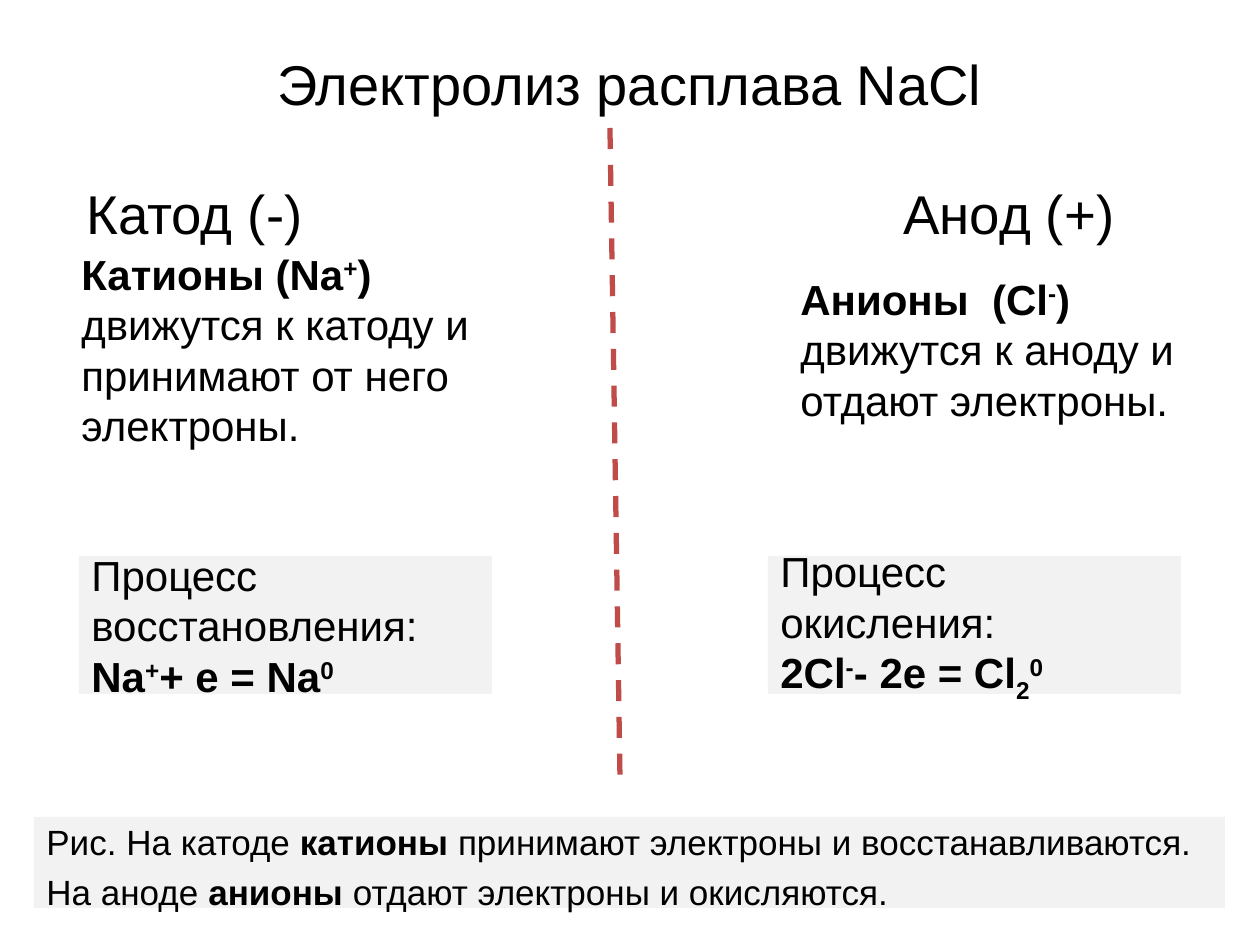
from dataclasses import dataclass

from lxml import etree
from pptx import Presentation
from pptx import util as u
from pptx.dml.color import RGBColor
from pptx.enum import dml, shapes, text
from pptx.oxml.ns import qn

PX = u.Inches(1) / 126


@dataclass(frozen=True)
class Theme:
    font: str = "Arial"
    ink: str = "000000"
    panel: str = "F2F2F2"
    divider: str = "BF4C48"
    title: float = 32
    heading: float = 31.2
    body: float = 24
    caption: float = 20
    divider_width: float = 3


THEME = Theme()
BOLD = {"bold": True}
SUP = {"bold": True, "baseline": 30}
SUB = {"bold": True, "baseline": -25}


def px(*lengths):
    return [u.Emu(round(length * PX)) for length in lengths]


def write(paragraph, wording, *, size, bold=False, baseline=0):
    run = paragraph.add_run()
    run.text = wording
    run.font.name = THEME.font
    run.font.size = u.Pt(size)
    run.font.bold = bold
    run.font.color.rgb = RGBColor.from_string(THEME.ink)
    if baseline:
        run.font._element.set("baseline", str(baseline * 1000))


def fill_frame(frame, paragraphs, size, align=text.PP_ALIGN.LEFT, spacing=None):
    frame.word_wrap = True
    frame.vertical_anchor = text.MSO_ANCHOR.MIDDLE
    for index, runs in enumerate(paragraphs):
        paragraph = frame.add_paragraph() if index else frame.paragraphs[0]
        paragraph.alignment = align
        paragraph.line_spacing = spacing
        for wording, style in runs:
            write(paragraph, wording, size=size, **style)


def add_title(slide, wording, box):
    title = slide.shapes.title
    title.left, title.top, title.width, title.height = px(*box)
    outline = etree.SubElement(title._element.spPr, qn("a:prstGeom"), prst="roundRect")
    etree.SubElement(outline, qn("a:avLst"))
    fill_frame(title.text_frame, [[(wording, {})]], THEME.title,
               text.PP_ALIGN.CENTER)


def add_block(slide, paragraphs, box, size, fill=None, spacing=None):
    block = slide.shapes.add_shape(shapes.MSO_SHAPE.ROUNDED_RECTANGLE, *px(*box))
    block.adjustments[0] = 0
    block.shadow.inherit = False
    block.line.fill.background()
    if fill:
        block.fill.solid()
        block.fill.fore_color.rgb = RGBColor.from_string(fill)
    else:
        block.fill.background()
    fill_frame(block.text_frame, paragraphs, size, spacing=spacing)


def add_pair(slide, contents, lefts, top, width, height, size, fill=None):
    for paragraphs, left in zip(contents, lefts):
        add_block(slide, paragraphs, (left, top, width, height), size, fill)


def add_divider(slide, ends):
    divider = slide.shapes.add_connector(shapes.MSO_CONNECTOR.STRAIGHT, *px(*ends))
    divider.line.color.rgb = RGBColor.from_string(THEME.divider)
    divider.line.width = u.Pt(THEME.divider_width)
    divider.line.dash_style = dml.MSO_LINE.DASH
    etree.SubElement(divider._element.spPr, qn("a:effectLst"))


def main():
    deck = Presentation()
    deck.slide_width, deck.slide_height = px(1260, 945)
    slide = deck.slides.add_slide(deck.slide_layouts[5])

    headings = [[[("Катод (-)", {})]], [[("Анод (+)", {})]]]
    caption = [[
        ("Рис. На катоде ", {}), ("катионы ", BOLD),
        ("принимают электроны и восстанавливаются. На аноде ", {}),
        ("анионы", BOLD), (" отдают электроны и окисляются.", {})]]
    ions = [
        [[("Катионы (Na", BOLD), ("+", SUP), (") ", BOLD),
          ("движутся к катоду и принимают от него электроны.", {})]],
        [[("Анионы  (Cl", BOLD), ("-", SUP), (") ", BOLD),
          ("движутся к аноду и отдают электроны.", {})]]]
    processes = [
        [[("Процесс восстановления: ", {}), ("Na", BOLD), ("+", SUP),
          ("+ e = Na", BOLD), ("0", SUP)]],
        [[("Процесс окисления:", {})],
         [("2Cl", BOLD), ("-", SUP), ("- 2e = Cl", BOLD), ("2", SUB), ("0", SUP)]]]

    add_title(slide, "Электролиз расплава NaCl", (246, 38, 768, 91))
    add_pair(slide, headings, (74, 891), 167, 295, 91, THEME.heading)
    add_block(slide, caption, (34, 817, 1191, 91), THEME.caption,
              THEME.panel, spacing=1.2)
    add_pair(slide, ions, (69, 788), 206, 413, 286, THEME.body)
    add_pair(slide, processes, (79, 768), 556, 413, 138, THEME.body, THEME.panel)
    add_divider(slide, (610, 128, 620, 777))

    deck.save("out.pptx")


if __name__ == "__main__":
    main()
